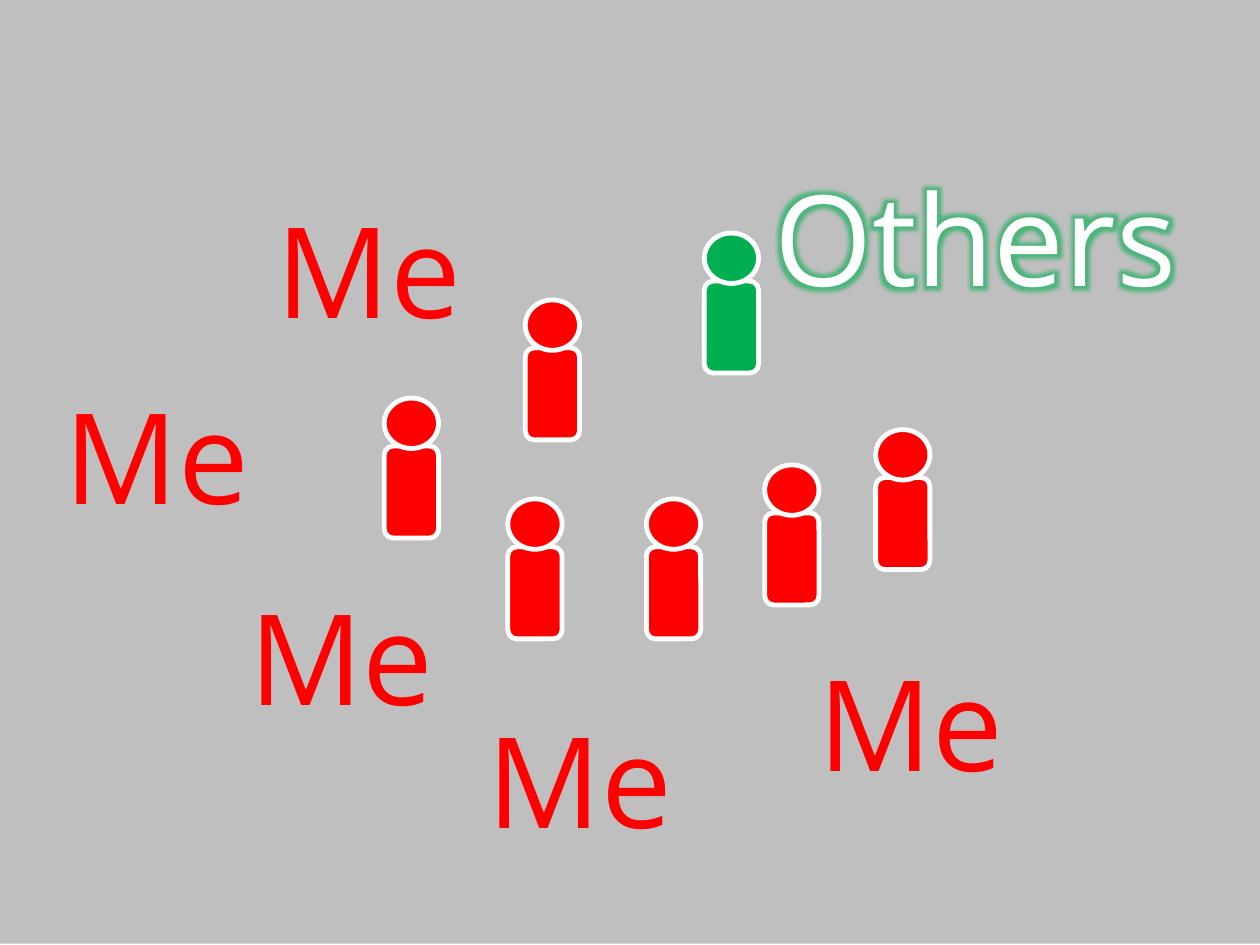
from dataclasses import dataclass

from lxml import etree
from pptx import Presentation
from pptx.dml.color import RGBColor
from pptx.enum import shapes, text
from pptx.oxml import ns
from pptx.util import Pt


@dataclass(frozen=True)
class Theme:
    font: str = "Open Sans"
    label_size: float = 72
    outline: float = 2.75
    backdrop: str = "BFBFBF"
    me: str = "FF0000"
    others: str = "00B050"
    white: str = "FFFFFF"


def rgb(value):
    return RGBColor.from_string(value)


def add_glow(r, color, radius=8, alpha=60):
    """Put a soft halo around the letters of a run."""
    effects = etree.Element(ns.qn("a:effectLst"))
    glow = etree.SubElement(effects, ns.qn("a:glow"), rad=str(Pt(radius)))
    clr = etree.SubElement(glow, ns.qn("a:srgbClr"), val=color)
    etree.SubElement(clr, ns.qn("a:alpha"), val=str(alpha * 1000))
    r.font.fill._xPr.find(ns.qn("a:solidFill")).addnext(effects)


def write(tf, words, *, font, size, color, align=text.PP_ALIGN.CENTER, glow=None):
    p = tf.paragraphs[0]
    p.alignment = align
    r = p.add_run()
    r.text = words
    r.font.size = Pt(size)
    r.font.color.rgb = rgb(color)
    r.font.name = font
    if glow:
        add_glow(r, glow)


class Deck:
    """Holds the theme and the current slide."""

    HEAD_H, BODY_TOP, BODY_H, PERSON_W = 28.8, 27.4, 52.6, 31

    def __init__(self, theme):
        self.theme = theme
        self.prs = Presentation()
        self.prs.slide_width, self.prs.slide_height = Pt(720), Pt(540)
        self.s = self.prs.slides.add_slide(self.prs.slide_layouts[6])

    def shape(self, kind, x, y, w, h, fill, line=None, parent=None):
        sp = (parent or self.s).shapes.add_shape(kind, Pt(x), Pt(y), Pt(w), Pt(h))
        sp.shadow.inherit = False
        sp.fill.solid()
        sp.fill.fore_color.rgb = rgb(fill)
        if line:
            sp.line.color.rgb = rgb(line)
            sp.line.width = Pt(self.theme.outline)
        else:
            sp.line.fill.background()
        return sp

    def person(self, x, y, color):
        grp = self.s.shapes.add_group_shape()
        kinds = shapes.MSO_SHAPE
        for kind, top, h in ((kinds.ROUNDED_RECTANGLE, self.BODY_TOP, self.BODY_H),
                             (kinds.OVAL, 0, self.HEAD_H)):
            self.shape(kind, x, y + top, self.PERSON_W, h, color,
                       self.theme.white, grp)

    def label(self, words, x, y, w=296.6, h=94.3, **style):
        tf = self.s.shapes.add_textbox(Pt(x), Pt(y), Pt(w), Pt(h)).text_frame
        tf.word_wrap = True
        tf.auto_size = text.MSO_AUTO_SIZE.SHAPE_TO_FIT_TEXT
        tf.vertical_anchor = text.MSO_ANCHOR.MIDDLE
        write(tf, words, font=self.theme.font, size=self.theme.label_size, **style)


def main():
    theme = Theme()
    deck = Deck(theme)

    # Grey backdrop
    deck.shape(shapes.MSO_SHAPE.RECTANGLE, 0, -0.72, 720, 540, theme.backdrop)

    # Labels
    for x, y, w in ((62.6, 105.8, 296.6), (46.8, 326.9, 296.6),
                    (372.2, 365, 296.6), (182.9, 397.4, 296.6),
                    (12.2, 212.4, 154.8)):
        deck.label("Me", x, y, w, color=theme.me)
    deck.label("Others", 409, 87.8, color=theme.white, glow=theme.others)

    # One green person among the red ones
    deck.person(402.5, 133.2, theme.others)
    for x, y in ((300.2, 171.4), (219.6, 227.5), (290.2, 285.1),
                 (369.4, 285.1), (437, 265.7), (500.4, 245.5)):
        deck.person(x, y, theme.me)

    deck.prs.save("out.pptx")


if __name__ == "__main__":
    main()
